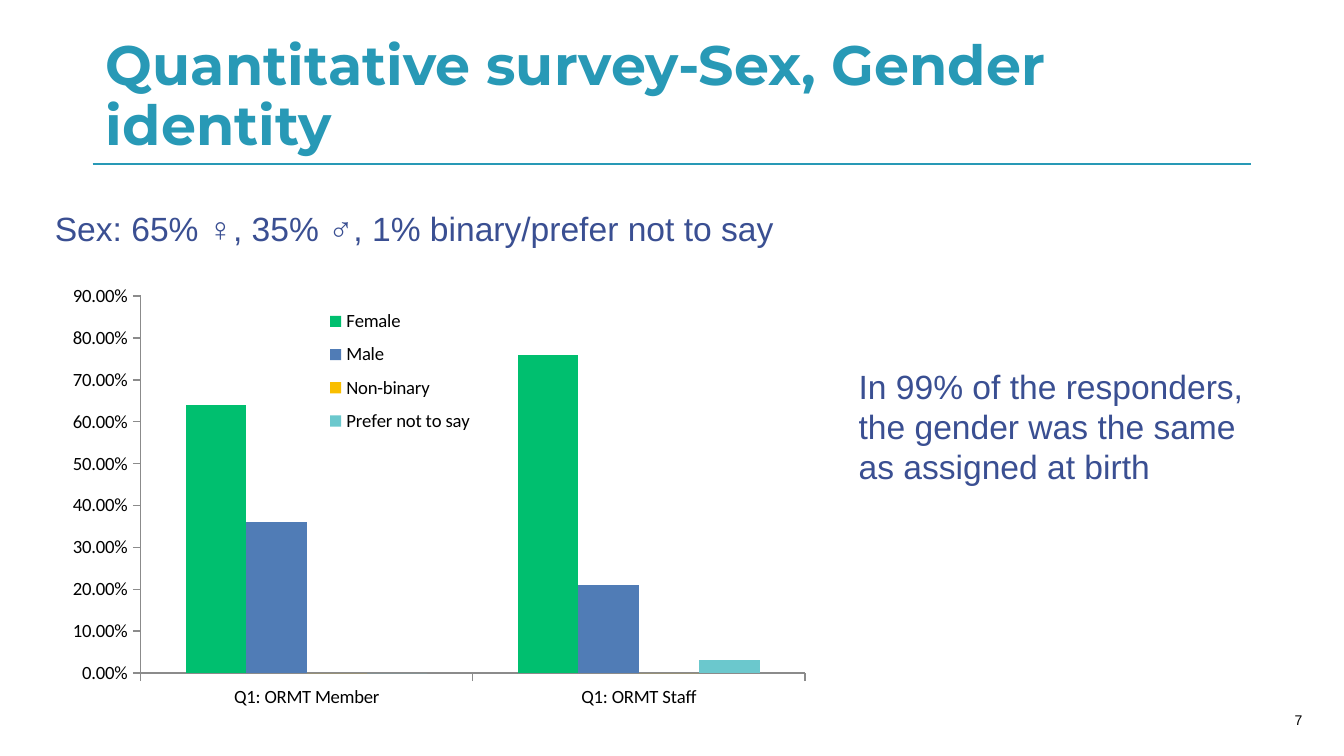
import dataclasses

import pptx
import pptx.chart.data
import pptx.dml.color
import pptx.enum.chart
import pptx.enum.shapes
import pptx.enum.text
import pptx.oxml
import pptx.oxml.ns
import pptx.util

Inches = pptx.util.Inches
Pt = pptx.util.Pt
Align = pptx.enum.text.PP_ALIGN
Anchor = pptx.enum.text.MSO_ANCHOR


@dataclasses.dataclass(frozen=True)
class Theme:
    teal: str = "2899B6"
    navy: str = "3A4F92"
    black: str = "000000"
    axis: str = "8B8B8B"
    series: tuple = ("00BF6F", "507CB6", "F9BE00", "6BC8CD")
    title_font: str = "Montserrat"
    body_font: str = "Arial"
    chart_font: str = "Calibri"
    title_size: float = 29.7
    body_size: float = 18
    chart_size: float = 10
    number_size: float = 7.5


THEME = Theme()
CATEGORIES = ("Q1: ORMT Member", "Q1: ORMT Staff")
SEX_SHARES = {
    "Female": (0.64, 0.76),
    "Male": (0.36, 0.21),
    "Non-binary": (0, 0),
    "Prefer not to say": (0, 0.03),
}


def rgb(color):
    return pptx.dml.color.RGBColor.from_string(color)


def add_text(slide, box, text, *, size=THEME.body_size, font=THEME.body_font,
             color=THEME.navy, bold=False, align=Align.LEFT, anchor=Anchor.TOP,
             wrap=True, line_spacing=None, right_inset=0.1):
    shape = slide.shapes.add_textbox(*map(Inches, box))
    frame = shape.text_frame
    frame.word_wrap = wrap
    frame.vertical_anchor = anchor
    frame.margin_right = Inches(right_inset)
    paragraph = frame.paragraphs[0]
    paragraph.alignment = align
    paragraph.line_spacing = line_spacing
    run = paragraph.add_run()
    run.text = text
    run.font.size = Pt(size)
    run.font.name = font
    run.font.bold = bold
    run.font.color.rgb = rgb(color)


def add_header(slide, box, text):
    """Place a bottom-anchored title with a rule along the foot of its box."""
    left, top, width, height = box
    bottom = top + height
    rule = slide.shapes.add_connector(
        pptx.enum.shapes.MSO_CONNECTOR.STRAIGHT,
        Inches(left), Inches(bottom), Inches(left + width), Inches(bottom))
    rule.line.color.rgb = rgb(THEME.teal)
    rule.line.width = Pt(1)
    properties = rule._element.spPr
    properties.append(properties.makeelement(pptx.oxml.ns.qn("a:effectLst"), {}))
    add_text(slide, box, text, size=THEME.title_size, font=THEME.title_font,
             color=THEME.teal, bold=True, anchor=Anchor.BOTTOM, line_spacing=0.9)


def set_layout(element, index, x, y, width, height, inner=False):
    """Fix a chart part at fractions of the chart's box."""
    tag = pptx.oxml.ns.qn("c:layout")
    for old in element.findall(tag):
        element.remove(old)
    settings = [("layoutTarget", "inner")] if inner else []
    settings += [("xMode", "edge"), ("yMode", "edge"),
                 ("x", x), ("y", y), ("w", width), ("h", height)]
    parts = "".join(f'<c:{name} val="{value}"/>' for name, value in settings)
    element.insert(index, pptx.oxml.parse_xml(
        f'<c:layout {pptx.oxml.ns.nsdecls("c")}>'
        f"<c:manualLayout>{parts}</c:manualLayout></c:layout>"))


def add_sex_chart(slide, box):
    data = pptx.chart.data.CategoryChartData(number_format="0.00%")
    data.categories = CATEGORIES
    for name, values in SEX_SHARES.items():
        data.add_series(name, values)
    chart = slide.shapes.add_chart(
        pptx.enum.chart.XL_CHART_TYPE.COLUMN_CLUSTERED,
        *map(Inches, box), data).chart
    chart.has_title = False
    chart.font.name = THEME.chart_font
    chart.font.size = Pt(THEME.chart_size)
    chart.font.color.rgb = rgb(THEME.black)

    plot = chart.plots[0]
    plot.gap_width = 150
    plot.overlap = 0
    plot.vary_by_categories = False
    for series, color in zip(plot.series, THEME.series):
        series.format.fill.solid()
        series.format.fill.fore_color.rgb = rgb(color)

    for axis in (chart.category_axis, chart.value_axis):
        axis.has_major_gridlines = False
        axis.major_tick_mark = pptx.enum.chart.XL_TICK_MARK.OUTSIDE
        axis.minor_tick_mark = pptx.enum.chart.XL_TICK_MARK.NONE
        axis.format.line.color.rgb = rgb(THEME.axis)
        axis.format.line.width = Pt(0.75)
    value_axis = chart.value_axis
    value_axis.minimum_scale = 0
    value_axis.maximum_scale = 0.9
    value_axis.major_unit = 0.1
    value_axis.tick_labels.number_format = "0.00%"
    value_axis.tick_labels.number_format_is_linked = False

    chart.has_legend = True
    legend = chart.legend
    legend.position = pptx.enum.chart.XL_LEGEND_POSITION.RIGHT
    legend.include_in_layout = True
    set_layout(legend._element, 1, 0.33, 0.05, 0.2, 0.33)
    plot_area = chart._chartSpace.chart.plotArea
    set_layout(plot_area, 0, 0.108, 0.044, 0.825, 0.858, inner=True)


def main():
    presentation = pptx.Presentation()
    presentation.slide_width = Inches(10)
    presentation.slide_height = presentation.slide_width * 9 // 16
    slide = presentation.slides.add_slide(presentation.slide_layouts[6])

    add_header(slide, (0.69, 0.3, 8.62, 0.92),
               "Quantitative survey-Sex, Gender identity")
    add_text(slide, (7.44, 5.21, 2.25, 0.3), "7", size=THEME.number_size,
             color=THEME.black, align=Align.RIGHT, anchor=Anchor.MIDDLE,
             right_inset=0)
    add_text(slide, (0.31, 1.5, 5.6, 0.4),
             "Sex: 65% ♀, 35% ♂, 1% binary/prefer not to say", wrap=False)
    add_sex_chart(slide, (0.4, 2.06, 5.99, 3.27))
    add_text(slide, (6.29, 2.67, 3.17, 1.01),
             "In 99% of the responders, the gender was the same as assigned at birth")

    presentation.save("out.pptx")


if __name__ == "__main__":
    main()
